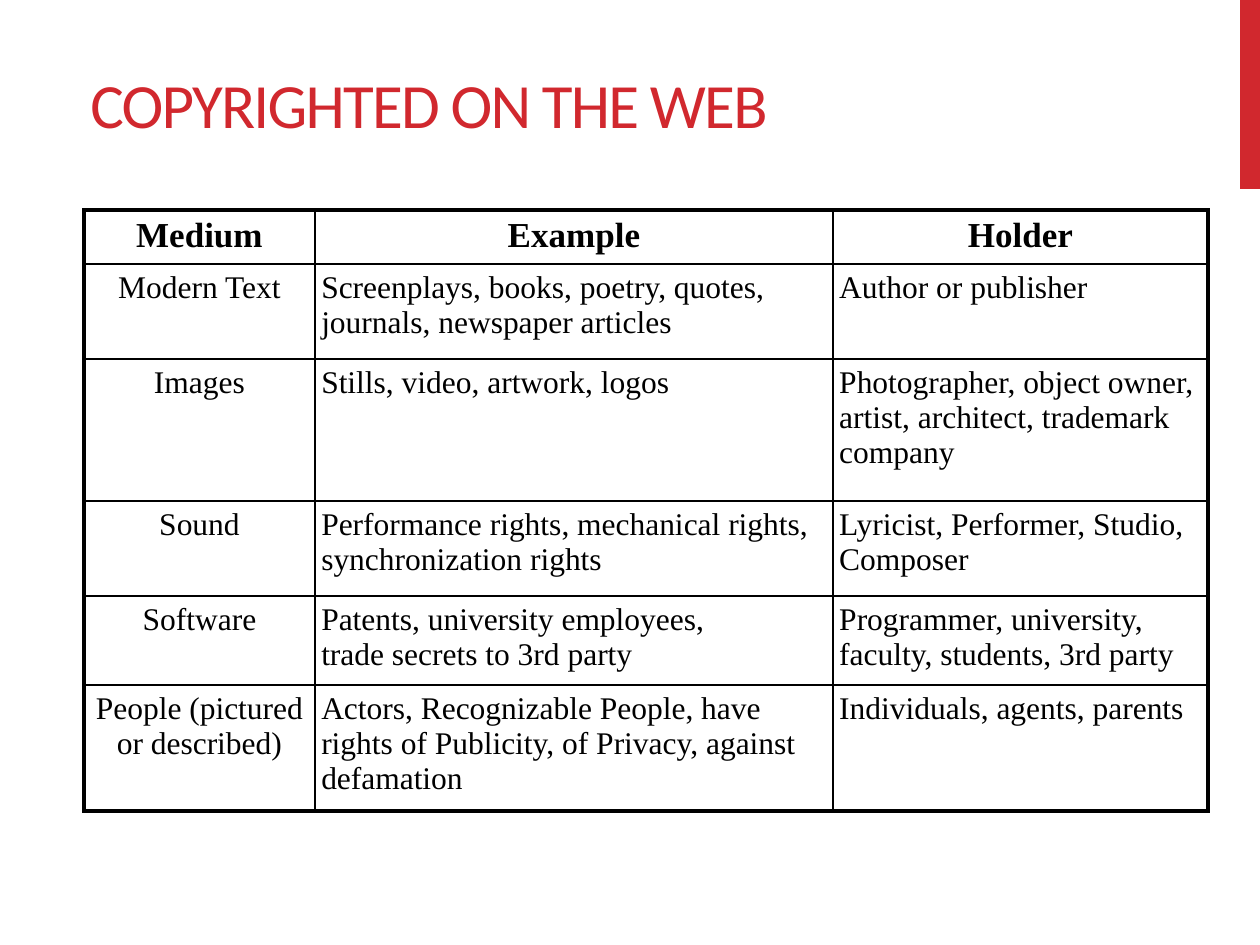
from lxml import etree
from pptx import Presentation
from pptx import util as u
from pptx.dml import color
from pptx.enum import shapes, text
from pptx.oxml import ns

PX = u.Inches(1) / 126


def px(count):
    return u.Emu(round(count * PX))


def paint(code):
    return color.RGBColor.from_string(code)


RED = "D1282E"
BLACK = "000000"
THICK, THIN = 2.25, 1

column_widths = [231, 518, 375]
row_heights = [54, 95, 142, 95, 89, 126]
rows = [
    ["Medium", "Example", "Holder"],
    ["Modern Text", "Screenplays, books, poetry, quotes, journals, newspaper articles", "Author or publisher"],
    ["Images", "Stills, video, artwork, logos", "Photographer, object owner, artist, architect, trademark company"],
    ["Sound", "Performance rights, mechanical rights, synchronization rights", "Lyricist, Performer, Studio, Composer"],
    ["Software", "Patents, university employees,\vtrade secrets to 3rd party", "Programmer, university, faculty, students, 3rd party"],
    ["People (pictured or described)", "Actors, Recognizable People, have rights of Publicity, of Privacy, against defamation", "Individuals, agents, parents"],
]
margins = {f"margin_{side}": u.Inches(0.05) for side in ("left", "top", "right", "bottom")}

deck = Presentation()
deck.slide_width, deck.slide_height = px(1260), px(945)
page = deck.slides.add_slide(deck.slide_layouts[5])

bar = page.shapes.add_shape(shapes.MSO_SHAPE.RECTANGLE, px(1240), 0, px(20), px(189))
bar.shadow.inherit = False
bar.fill.solid()
bar.fill.fore_color.rgb = paint(RED)
bar.line.fill.background()

title = page.shapes.title
title.left, title.top, title.width, title.height = px(84), px(42), px(1071), px(105)
title_format = {
    **margins,
    "word_wrap": True,
    "auto_size": text.MSO_AUTO_SIZE.NONE,
    "vertical_anchor": text.MSO_ANCHOR.BOTTOM,
}
for name, value in title_format.items():
    setattr(title.text_frame, name, value)
para = title.text_frame.paragraphs[0]
para.alignment = text.PP_ALIGN.LEFT
span = para.add_run()
span.text = "COPYRIGHTED ON THE WEB"
for name, value in {"name": "Calibri", "size": u.Pt(36)}.items():
    setattr(span.font, name, value)
span.font.color.rgb = paint(RED)
span.font._element.set("spc", "-100")

frame = page.shapes.add_table(
    len(rows), len(column_widths), px(84), px(210), px(sum(column_widths)), px(sum(row_heights))
)
table = frame.table
table.first_row = table.horz_banding = False
for column, width in zip(table.columns, column_widths):
    column.width = px(width)
for row, height in zip(table.rows, row_heights):
    row.height = px(height)

for row_index, wording in enumerate(rows):
    header = row_index == 0
    for column_index, words in enumerate(wording):
        cell = table.cell(row_index, column_index)
        for name, value in margins.items():
            setattr(cell, name, value)
        para = cell.text_frame.paragraphs[0]
        para.text = words
        centred = header or column_index == 0
        para.alignment = text.PP_ALIGN.CENTER if centred else text.PP_ALIGN.LEFT
        font_format = {"name": "Times New Roman", "size": u.Pt(20 if header else 18), "bold": header}
        for span in para.runs:
            for name, value in font_format.items():
                setattr(span.font, name, value)
            span.font.color.rgb = paint(BLACK)

        outer_edges = {
            "lnL": column_index == 0,
            "lnR": column_index == len(column_widths) - 1,
            "lnT": header,
            "lnB": row_index == len(rows) - 1,
        }
        properties = cell._tc.get_or_add_tcPr()
        for edge, outer in outer_edges.items():
            border = etree.SubElement(properties, ns.qn(f"a:{edge}"), w=str(u.Pt(THICK if outer else THIN)))
            fill = etree.SubElement(border, ns.qn("a:solidFill"))
            etree.SubElement(fill, ns.qn("a:srgbClr"), val=BLACK)
        cell.fill.background()

deck.save("out.pptx")
